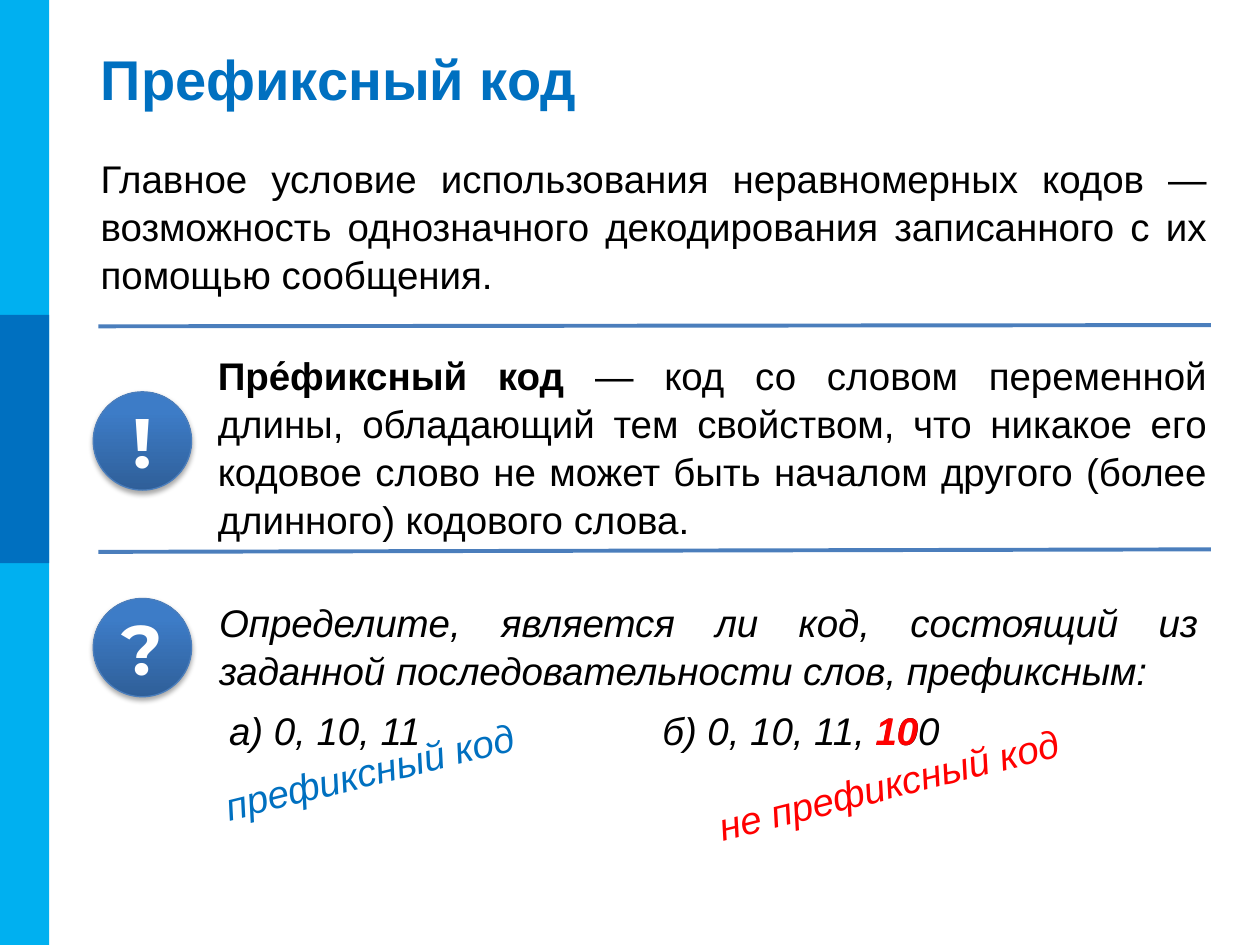
from lxml import etree
from pptx import Presentation
from pptx.dml.color import RGBColor
from pptx.enum.shapes import MSO_CONNECTOR, MSO_SHAPE
from pptx.enum.text import MSO_ANCHOR, PP_ALIGN
from pptx.oxml.ns import nsdecls, qn
from pptx.util import Inches, Pt

RECT, OVAL, STRAIGHT = MSO_SHAPE.RECTANGLE, MSO_SHAPE.OVAL, MSO_CONNECTOR.STRAIGHT
MIDDLE, NO_ANCHOR = MSO_ANCHOR.MIDDLE, MSO_ANCHOR.TOP
LEFT, CENTER, JUSTIFY = PP_ALIGN.LEFT, PP_ALIGN.CENTER, PP_ALIGN.JUSTIFY

BLACK = RGBColor(0x00, 0x00, 0x00)
WHITE = RGBColor(0xFF, 0xFF, 0xFF)
SKY = RGBColor(0x00, 0xB0, 0xF0)
BLUE = RGBColor(0x00, 0x70, 0xC0)
RED = RGBColor(0xFF, 0x00, 0x00)
RULE = RGBColor(0x4B, 0x7E, 0xBC)
BADGE_DARK = RGBColor(0x2F, 0x5F, 0x99)
BADGE_LIGHT = RGBColor(0x3D, 0x7C, 0xC7)

# Content
TITLE = "Префиксный код"
CONDITION = ("Главное условие использования неравномерных кодов — возможность "
             "однозначного декодирования записанного с их помощью сообщения.")
TERM = "Пре́фиксный код "
DEFINITION = ("— код со словом переменной длины, обладающий тем свойством, что "
              "никакое его кодовое слово не может быть началом другого "
              "(более длинного) кодового слова.")
TASK = ("Определите, является ли код, состоящий из заданной "
        "последовательности слов, префиксным:")

# Grid, in inches
SLIDE_W, SLIDE_H = 10, 7.5
BAND_W = 0.39
MARGIN, INDENT, RIGHT = 0.7, 1.63, 9.68
RULE_LEFT, RULE_RIGHT = 0.78, 9.61
BADGE_LEFT, BADGE_SIZE = 0.74, 0.78
ANSWER_TOP, ANSWER_W, LINE_H = 5.55, 2.97, 0.47

# Text, colour, bold, italic, rotation, box
TEXTS = [
    ([(CONDITION, False)], BLACK, False, 0, (MARGIN, 1.17, RIGHT - MARGIN, 1.33)),
    ([(TERM, True), (DEFINITION, False)], BLACK, False, 0,
     (INDENT, 2.73, RIGHT - INDENT, 1.64)),
    ([(TASK, False)], BLACK, True, 0, (INDENT + 0.01, 4.69, 7.97, 1.02)),
    ([("а) 0, 10, 11", False)], BLACK, True, 0, (1.72, ANSWER_TOP, ANSWER_W, LINE_H)),
    ([("б) 0, 10, 11, 100", False)], BLACK, True, 0,
     (5.16, ANSWER_TOP, ANSWER_W, LINE_H)),
    ([("префиксный код", False)], BLUE, True, 346.2, (1.65, 5.82, ANSWER_W, LINE_H)),
    ([("не префиксный код", False)], RED, True, 345.9, (5.55, 5.86, 3.91, LINE_H)),
    ([("10", True)], RED, True, 0, (6.85, ANSWER_TOP, 1.25, LINE_H)),
]
BADGES = [("!", 3.11), ("?", 4.75)]
RULES = [(2.59, 2.58), (4.38, 4.36)]
BANDS = [(SKY, 0, SLIDE_H), (BLUE, 2.5, 1.97)]

SHADOW = (f'<a:effectLst {nsdecls("a")}><a:outerShdw blurRad="{Pt(3.1)}" '
          f'dist="{Pt(1.8)}" dir="5400000" rotWithShape="0">'
          '<a:srgbClr val="000000"><a:alpha val="35000"/></a:srgbClr>'
          '</a:outerShdw></a:effectLst>')


def box(*lengths):
    return [Inches(length) for length in lengths]


def style(paragraph, size, color, font="Arial", align=JUSTIFY):
    paragraph.alignment = align
    paragraph.font.name = font
    paragraph.font.size = Pt(size)
    paragraph.font.color.rgb = color


def add_text(slide, runs, color, italic, rotation, place):
    text_box = slide.shapes.add_textbox(*box(*place))
    text_box.rotation = rotation
    text_box.text_frame.word_wrap = True
    paragraph = text_box.text_frame.paragraphs[0]
    style(paragraph, 22, color)
    paragraph.font.italic = italic
    paragraph.space_before = Pt(4.4)
    paragraph.line_spacing = 1.04
    for text, bold in runs:
        run = paragraph.add_run()
        run.text = text
        run.font.bold = bold


def add_badge(slide, sign, top):
    badge = slide.shapes.add_shape(
        OVAL, *box(BADGE_LEFT, top, BADGE_SIZE, BADGE_SIZE))
    badge.fill.gradient()
    badge.fill.gradient_angle = 90
    dark, light = badge.fill.gradient_stops
    dark.color.rgb, dark.position = BADGE_DARK, 0
    light.color.rgb, light.position = BADGE_LIGHT, 0.8
    badge.line.color.rgb = RULE
    badge.line.width = Pt(0.75)
    badge._element.spPr.append(etree.fromstring(SHADOW))
    frame = badge.text_frame
    frame.vertical_anchor = MIDDLE
    frame.text = sign
    style(frame.paragraphs[0], 40, WHITE, "Montserrat", CENTER)
    frame.paragraphs[0].font.bold = True


def main():
    deck = Presentation()
    deck.slide_width, deck.slide_height = box(SLIDE_W, SLIDE_H)
    slide = deck.slides.add_slide(deck.slide_layouts[5])

    # Side bands
    for color, top, height in BANDS:
        band = slide.shapes.add_shape(RECT, *box(0, top, BAND_W, height))
        band.fill.solid()
        band.fill.fore_color.rgb = color
        band.line.fill.background()
        band.shadow.inherit = False

    # Title
    title = slide.shapes.title
    title.left, title.top, title.width, title.height = box(MARGIN, 0.3, 9.02, 0.64)
    title.text_frame.text = TITLE
    title.text_frame.vertical_anchor = MIDDLE
    style(title.text_frame.paragraphs[0], 32, BLUE, align=LEFT)
    title.text_frame.paragraphs[0].font.bold = True

    # Rules around the definition
    for start, end in RULES:
        rule = slide.shapes.add_connector(
            STRAIGHT, *box(RULE_LEFT, start, RULE_RIGHT, end))
        rule.line.color.rgb = RULE
        rule.line.width = Pt(2.25)
        etree.SubElement(rule._element.spPr, qn("a:effectLst"))

    # Badges and texts
    for sign, top in BADGES:
        add_badge(slide, sign, top)
    for text in TEXTS:
        add_text(slide, *text)

    deck.save("out.pptx")


if __name__ == "__main__":
    main()
